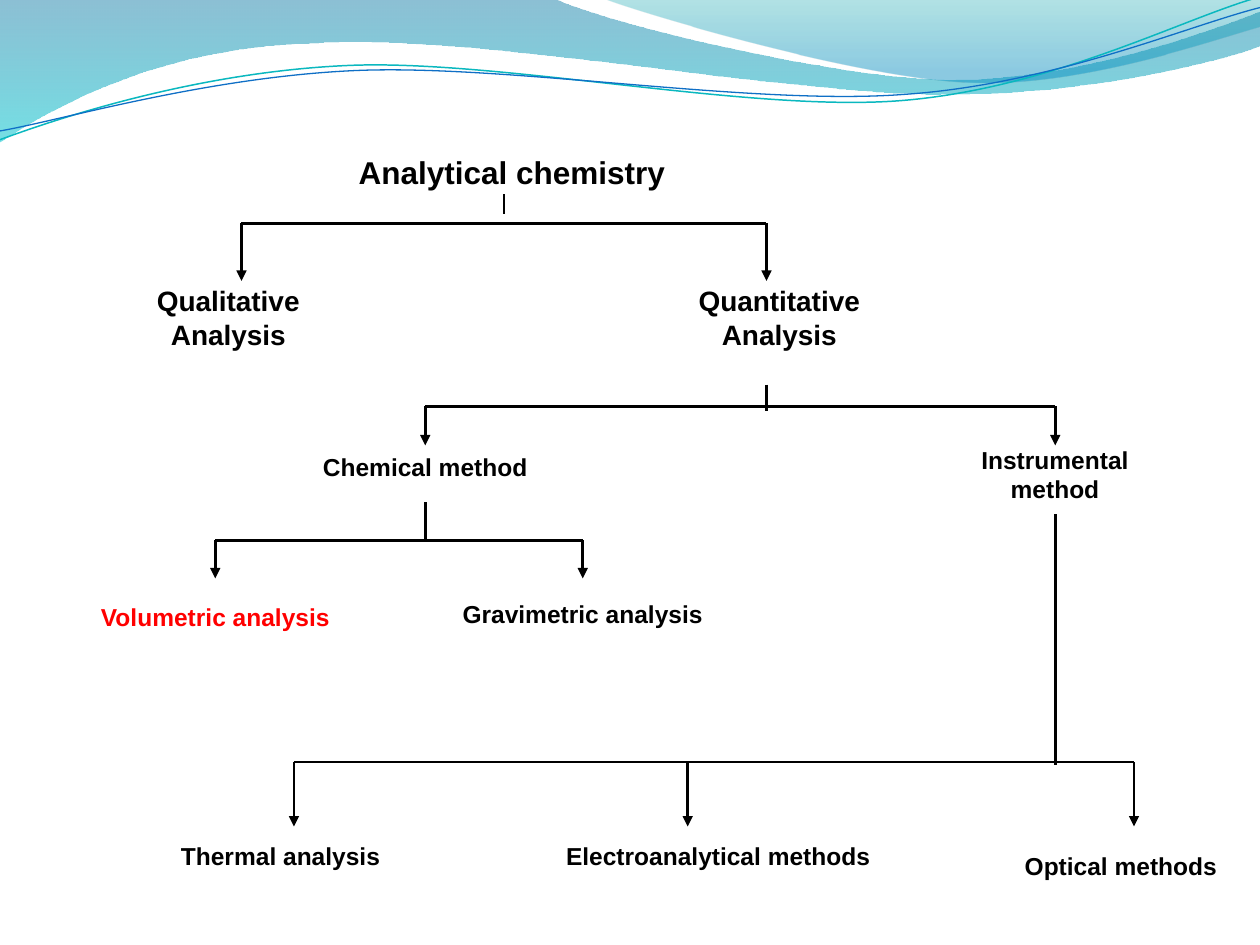
import math
from dataclasses import dataclass
from typing import Optional

from lxml import etree
from pptx import Presentation
from pptx import util as u
from pptx.dml import color
from pptx.enum import shapes, text
from pptx.oxml import ns


@dataclass(frozen=True)
class Theme:
    font: str = "Arial"
    ink: str = "000000"
    accent: str = "FF0000"
    title: float = 18
    branch: float = 16
    method: float = 14
    rule: float = 1.5
    deep_wave: tuple = ((0, "0074A1", 45), (1, "00C6CF", 55))
    pale_wave: tuple = ((0, "00A1A9", 30), (0.8, "008BBF", 45))
    teal_line: tuple = ("0AB8BF", 0.85)
    blue_line: tuple = ("0F6FC6", 0.75)


THEME = Theme()


@dataclass(frozen=True)
class Wave:
    box: tuple
    start: tuple
    segments: tuple
    stops: Optional[tuple] = None
    stroke: Optional[tuple] = None
    rotation: float = 0


@dataclass(frozen=True)
class Label:
    lines: tuple
    box: tuple
    size: float = THEME.method
    color: str = THEME.ink
    frame: tuple = ()


@dataclass(frozen=True)
class Branch:
    stem: tuple
    bar: float
    drops: tuple
    tip: float
    parent: str = ""
    children: tuple = ()


WAVES = (
    Wave((-0.7, -0.7, 721.4, 82.1), (0, 0), (
        (316.8, -0.7),
        (342.7, 12.2, 478.1, 45.4, 545.8, 45.4),
        (614.2, 45.4, 689.8, 18.7, 720, 6.5),
        (720.7, 25.9),
        (707.8, 31.7, 626.4, 54.7, 537.1, 54),
        (447.8, 54, 275, 20.2, 185, 24.5),
        (92.9, 25.9, 33.1, 59.8, -0.7, 81.4),
        (0, 0),
    ), stops=THEME.deep_wave),
    Wave((344.9, -0.7, 375.1, 50.4), (344.9, -0.7), (
        (366.5, 7.9, 491, 44.6, 553.7, 46.8),
        (616.3, 49.7, 691.9, 23, 720, 15.1),
        (720, 0),
        (344.9, -0.7),
    ), stops=THEME.pale_wave),
    Wave((-1.4, 15.8, 721.4, 51.1), (-0.4, 80), (
        (34.6, 67, 113.8, 41, 199.4, 37.4),
        (284.4, 33.8, 427, 64.1, 513.4, 57.6),
        (599.8, 51.1, 675.4, 10.8, 718.6, -1.4),
    ), stroke=THEME.teal_line, rotation=357.3),
    Wave((-1.4, 21.6, 722.2, 41.8), (-0.4, 74.9), (
        (33.8, 69.1, 118.1, 43.9, 203.8, 40.3),
        (290.2, 36.7, 429.8, 60.5, 516.2, 54),
        (601.9, 48.2, 677.5, 15.1, 720, 4.3),
    ), stroke=THEME.blue_line, rotation=357.3),
)

LABELS = (
    Label(("Analytical chemistry",), (133, 77.8, 319, 62), THEME.title,
          frame=(("word_wrap", False), ("vertical_anchor", text.MSO_ANCHOR.MIDDLE),
                 ("margin_bottom", u.Pt(25)))),
    Label(("Qualitative", "Analysis"), (18.2, 158.7, 224.6, 54.7), THEME.branch),
    Label(("Quantitative", "Analysis"), (333, 158.6, 224.6, 51.8), THEME.branch),
    Label(("Chemical method",), (122.5, 254.5, 241, 32.5)),
    Label(("Instrumental", "method"), (512.9, 250.6, 180, 51)),
    Label(("Volumetric analysis",), (48.2, 340.6, 149.8, 26), color=THEME.accent),
    Label(("Gravimetric analysis",), (243, 338.8, 180, 51)),
    Label(("Thermal analysis",), (77.9, 477, 164.9, 51)),
    Label(("Electroanalytical methods",), (302.8, 477, 215.3, 51)),
    Label(("Optical methods",), (572.8, 482.8, 135.4, 51)),
)

BRANCHES = (
    Branch((288, 111, 122.3), 127.6, (138, 438), 160.5),
    Branch((438, 219.8, 234.8), 232.2, (243, 603), 254.5,
           children=("Chemical method", "")),
    Branch((243, 287, 308.7), 308.7, (123, 333), 330.5, parent="Chemical method"),
    Branch((603, 294, 437), 435.5, (168, 393, 648), 472.3),
)


def rgb(value: str) -> color.RGBColor:
    return color.RGBColor.from_string(value)


def set_attrs(target, values: dict) -> None:
    for name, value in values.items():
        setattr(target, name, value)


def to_local(wave: Wave, x: float, y: float) -> tuple:
    left, top, width, height = wave.box
    dx, dy = x - left - width / 2, y - top - height / 2
    angle = -math.radians(wave.rotation)
    return (u.Pt(dx * math.cos(angle) - dy * math.sin(angle) + width / 2),
            u.Pt(dx * math.sin(angle) + dy * math.cos(angle) + height / 2))


def add_outline(s, wave: Wave):
    left, top, width, height = (u.Pt(v) for v in wave.box)
    builder = s.shapes.build_freeform(left, top)
    builder.add_line_segments([(left + width, top + height)], close=False)
    sp = builder.convert_to_shape()
    sp.rotation = wave.rotation
    outline = next(sp._element.iter(ns.qn("a:path")))
    for child in list(outline):
        outline.remove(child)
    for seg in (wave.start,) + wave.segments:
        tag = "a:cubicBezTo" if len(seg) == 6 else "a:lnTo" if len(outline) else "a:moveTo"
        command = etree.SubElement(outline, ns.qn(tag))
        for x, y in zip(seg[::2], seg[1::2]):
            px, py = to_local(wave, x, y)
            etree.SubElement(command, ns.qn("a:pt"), x=str(int(px)), y=str(int(py)))
    if wave.stops:
        etree.SubElement(outline, ns.qn("a:close"))
    return sp


def draw_wave(s, wave: Wave) -> None:
    sp = add_outline(s, wave)
    sp.shadow.inherit = False
    if wave.stops:
        sp.line.fill.background()
        sp.fill.gradient()
        sp.fill.gradient_angle = 270
        for stop, (position, value, _) in zip(sp.fill.gradient_stops, wave.stops):
            stop.position = position
            stop.color.rgb = rgb(value)
        for node, (_, _, opacity) in zip(sp._element.iter(ns.qn("a:srgbClr")), wave.stops):
            etree.SubElement(node, ns.qn("a:alpha"), val=str(opacity * 1000))
    else:
        value, width = wave.stroke
        sp.fill.background()
        sp.line.color.rgb = rgb(value)
        sp.line.width = u.Pt(width)


def draw_label(s, label: Label):
    sp = s.shapes.add_textbox(*(u.Pt(v) for v in label.box))
    tf = sp.text_frame
    set_attrs(tf, {"word_wrap": True, **dict(label.frame)})
    for i, line in enumerate(label.lines):
        p = tf.add_paragraph() if i else tf.paragraphs[0]
        p.alignment = text.PP_ALIGN.CENTER
        r = p.add_run()
        r.text = line
        set_attrs(r.font, {"name": THEME.font, "size": u.Pt(label.size), "bold": True})
        r.font.color.rgb = rgb(label.color)
    return sp


def draw_line(s, start: tuple, end: tuple, arrow: bool = False):
    cx = s.shapes.add_connector(shapes.MSO_CONNECTOR.STRAIGHT,
                                *(u.Pt(v) for v in start + end))
    cx.line.color.rgb = rgb(THEME.ink)
    cx.line.width = u.Pt(THEME.rule)
    if arrow:
        etree.SubElement(cx.line._get_or_add_ln(), ns.qn("a:tailEnd"), type="triangle")
    etree.SubElement(cx._element.spPr, ns.qn("a:effectLst"))
    return cx


def draw_branch(s, branch: Branch, boxes: dict) -> None:
    x, top, bottom = branch.stem
    stem = draw_line(s, (x, top), (x, bottom))
    if branch.parent:
        stem.begin_connect(boxes[branch.parent], 2)
    draw_line(s, (branch.drops[0], branch.bar), (branch.drops[-1], branch.bar))
    for i, x in enumerate(branch.drops):
        drop = draw_line(s, (x, branch.bar), (x, branch.tip), arrow=True)
        if branch.children and branch.children[i]:
            drop.end_connect(boxes[branch.children[i]], 0)


def main() -> None:
    prs = Presentation()
    set_attrs(prs, {"slide_width": u.Pt(720), "slide_height": u.Pt(540)})
    s = prs.slides.add_slide(prs.slide_layouts[6])
    for wave in WAVES:
        draw_wave(s, wave)
    boxes = {label.lines[0]: draw_label(s, label) for label in LABELS}
    for branch in BRANCHES:
        draw_branch(s, branch, boxes)
    prs.save("out.pptx")


if __name__ == "__main__":
    main()
